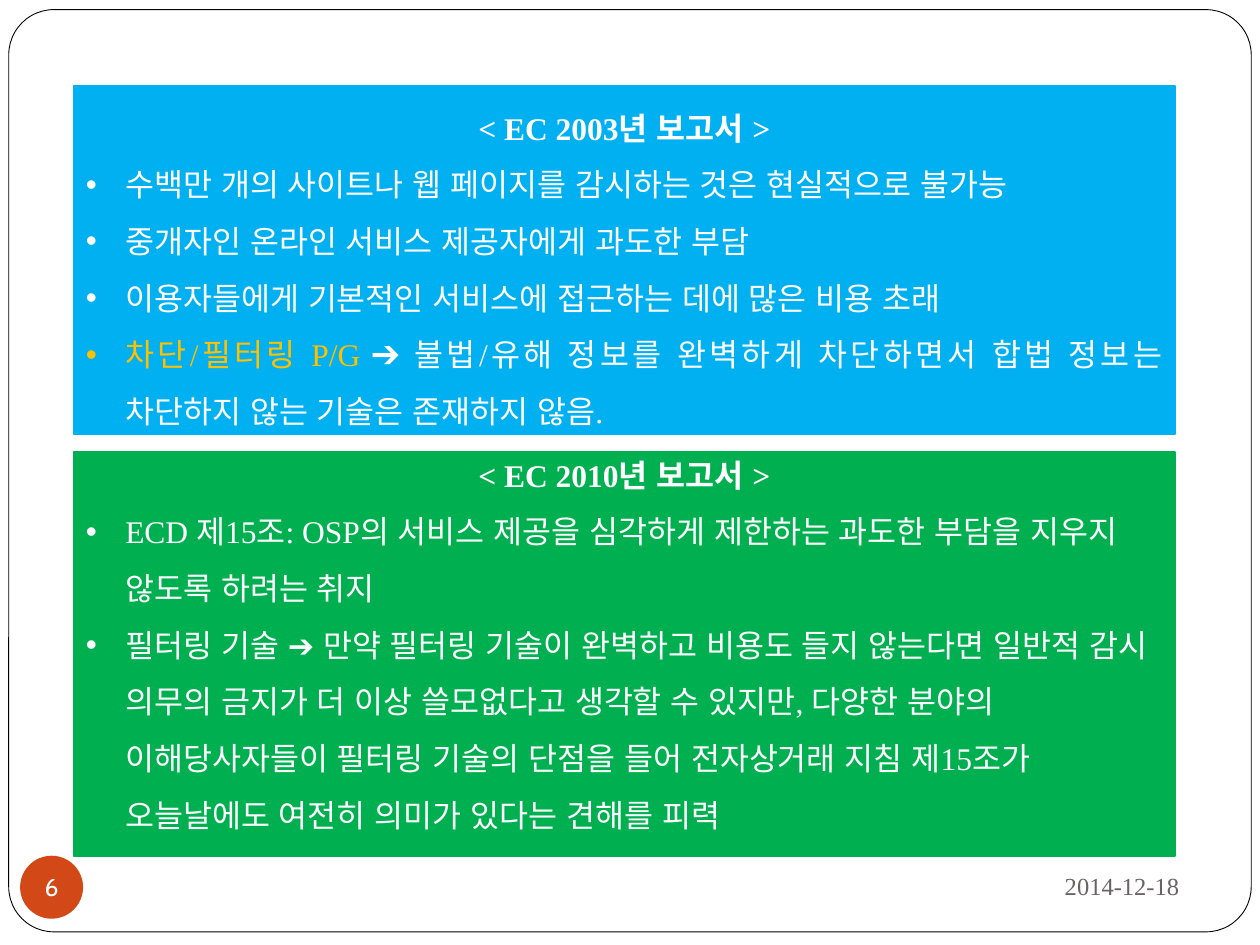
"""Build the slide that sets the EC 2003 report beside the EC 2010 report."""
from lxml.etree import SubElement
from pptx import Presentation
from pptx.dml.color import RGBColor
from pptx.enum.lang import MSO_LANGUAGE_ID as Lang
from pptx.enum.shapes import MSO_SHAPE as Shape
from pptx.enum.text import MSO_ANCHOR as Anchor, PP_ALIGN as Align
from pptx.oxml.ns import qn
from pptx.util import Pt

COLORS = {
    "white": "FFFFFF", "black": "000000", "blue": "00B0F0", "green": "00B050",
    "amber": "FFC000", "orange": "D34817", "gray": "696464",
}
SERIF = "Times New Roman"


def add_panel(kind, box, fill, line=None, width=1):
    panel = slide.shapes.add_shape(kind, *[Pt(length) for length in box])
    panel.shadow.inherit = False
    panel.fill.solid()
    panel.fill.fore_color.rgb = RGBColor.from_string(COLORS[fill])
    if line:
        panel.line.color.rgb = RGBColor.from_string(COLORS[line])
        panel.line.width = Pt(width)
    else:
        panel.line.fill.background()
    return panel


def add_words(paragraph, words, color="white", **styles):
    run = paragraph.add_run()
    run.text = words
    run.font.color.rgb = RGBColor.from_string(COLORS[color])
    formats = {"name": SERIF, "size": Pt(18), "bold": False, "language_id": Lang.KOREAN}
    for key, value in (formats | styles).items():
        setattr(run.font, key, value)


deck = Presentation()
deck.slide_width, deck.slide_height = Pt(720), Pt(540)
slide = deck.slides.add_slide(deck.slide_layouts[6])

border = add_panel(Shape.ROUNDED_RECTANGLE, (5, 5.5, 710, 527), "white", "black", 0.5)
border.adjustments[0] = 0.049

date = slide.shapes.add_textbox(Pt(486), Pt(487.5), Pt(195), Pt(37.5)).text_frame
date.word_wrap = True
date.vertical_anchor = Anchor.MIDDLE
date.paragraphs[0].alignment = Align.RIGHT
add_words(date.paragraphs[0], "2014-12-18", "gray", size=Pt(14))

page = add_panel(Shape.OVAL, (11.5, 489, 36, 36), "orange").text_frame
page_format = {
    "margin_left": 0, "margin_right": 0, "margin_top": 0, "margin_bottom": 0,
    "word_wrap": False, "vertical_anchor": Anchor.MIDDLE,
}
for key, value in page_format.items():
    setattr(page, key, value)
page.paragraphs[0].alignment = Align.CENTER
add_words(page.paragraphs[0], "6", name="Cabin", size=Pt(14))

reports = [
    ("< EC 2003년 보고서 >", "blue", 49, 199, 3.6, Align.JUSTIFY, [
        [("수백만 개의 사이트나 웹 페이지를 감시하는 것은 현실적으로 불가능", "white")],
        [("중개자인 온라인 서비스 제공자에게 과도한 부담", "white")],
        [("이용자들에게 기본적인 서비스에 접근하는 데에 많은 비용 초래", "white")],
        [("차단/필터링 P/G ", "amber"),
         ("➔ 불법/유해 정보를 완벽하게 차단하면서 합법 정보는 "
          "차단하지 않는 기술은 존재하지 않음.", "white")],
    ]),
    ("< EC 2010년 보고서 >", "green", 258.5, 230.5, 25, Align.LEFT, [
        [("ECD 제15조: OSP의 서비스 제공을 심각하게 제한하는 과도한 부담을 "
          "지우지 않도록 하려는 취지", "white")],
        [("필터링 기술 ➔ 만약 필터링 기술이 완벽하고 비용도 들지 않는다면 "
          "일반적 감시 의무의 금지가 더 이상 쓸모없다고 생각할 수 있지만, "
          "다양한 분야의 이해당사자들이 필터링 기술의 단점을 들어 전자상거래 지침 "
          "제15조가 오늘날에도 여전히 의미가 있다는 견해를 피력", "white")],
    ]),
]

for heading, color, top, height, bottom_margin, alignment, findings in reports:
    report = add_panel(Shape.RECTANGLE, (42, top, 629.5, height), color, color).text_frame
    report.word_wrap = True
    report.vertical_anchor = Anchor.MIDDLE
    report.margin_bottom = Pt(bottom_margin)
    title = report.paragraphs[0]
    title.alignment = Align.CENTER
    title.line_spacing = 1.5
    add_words(title, heading, bold=True)
    for finding in findings:
        item = report.add_paragraph()
        item.alignment = alignment
        item.line_spacing = 1.5
        for words, word_color in finding:
            add_words(item, words, word_color)
        properties = item._p.get_or_add_pPr()
        properties.set("marL", str(Pt(22.5)))
        properties.set("indent", str(-Pt(22.5)))
        SubElement(properties, qn("a:buFont"), typeface="Arial")
        SubElement(properties, qn("a:buChar"), char="•")

deck.save("out.pptx")
